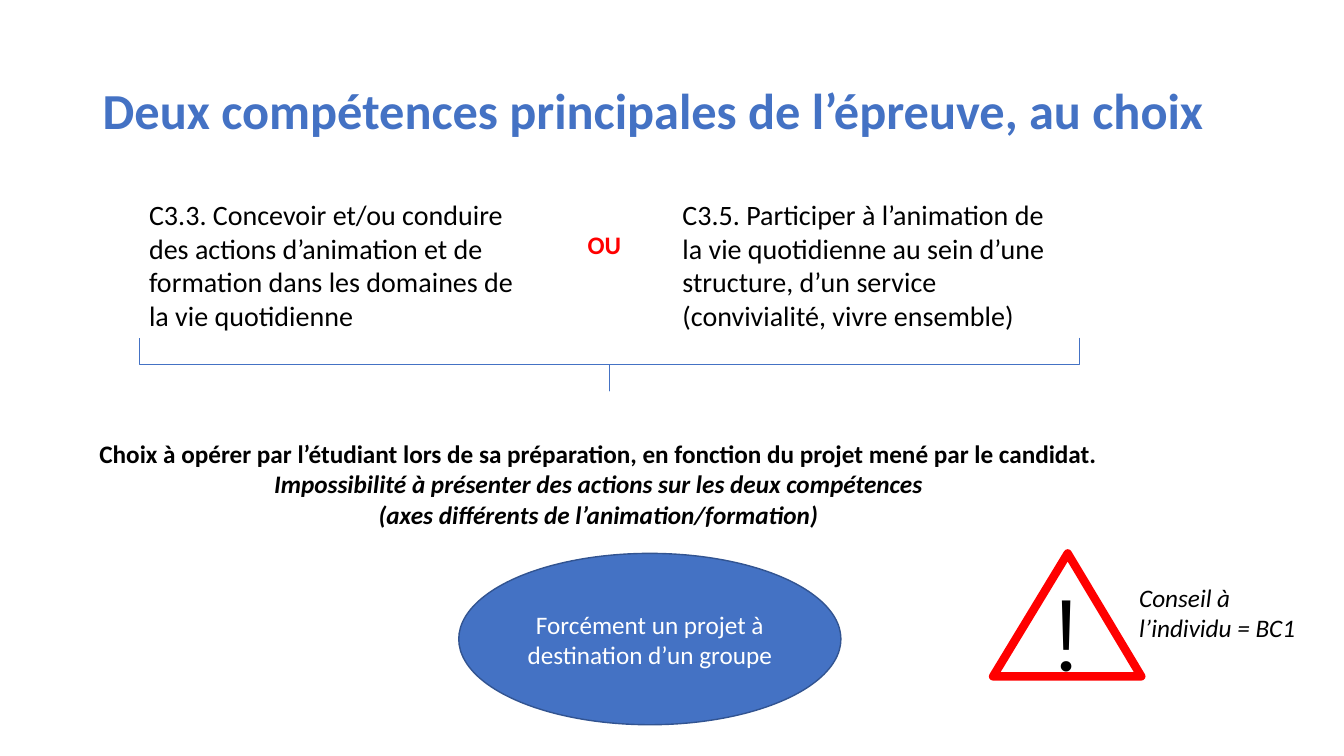
from lxml.etree import SubElement
from pptx import Presentation
from pptx.dml.color import RGBColor
from pptx.enum.shapes import MSO_SHAPE
from pptx.enum.text import MSO_ANCHOR, PP_ALIGN
from pptx.oxml.ns import qn
from pptx.util import Pt

PX = 9144  # one px is a hundredth of an inch
BLUE, RED, BLACK, WHITE = "4472C4", "FF0000", "000000", "FFFFFF"


def paint(color, code):
    color.rgb = RGBColor.from_string(code)


class Board:
    font = "Calibri"

    def __init__(self, wide, high):
        self.deck = Presentation()
        self.deck.slide_width = wide * PX
        self.deck.slide_height = high * PX
        self.slide = self.deck.slides.add_slide(self.deck.slide_layouts[6])

    def label(self, frame, lines, size, color, bold=False, italics=(),
              align=PP_ALIGN.LEFT, anchor=MSO_ANCHOR.TOP, font=None):
        frame.word_wrap = True
        frame.vertical_anchor = anchor
        for i, line in enumerate(lines):
            para = frame.paragraphs[0] if i == 0 else frame.add_paragraph()
            para.text = line
            para.alignment = align
            para.font.name = font or self.font
            para.font.size = Pt(size)
            para.font.bold = bold
            para.font.italic = i in italics
            paint(para.font.color, color)
        return frame

    def text(self, box, lines, size, color=BLACK, **style):
        shape = self.slide.shapes.add_textbox(*(n * PX for n in box))
        return self.label(shape.text_frame, lines, size, color, **style)

    def finish(self, shape, line, width, fill=None):
        shape.shadow.inherit = False
        if fill:
            shape.fill.solid()
            paint(shape.fill.fore_color, fill)
        else:
            shape.fill.background()
        paint(shape.line.color, line)
        shape.line.width = Pt(width)
        return shape

    def shape(self, kind, box, line, width, fill=None):
        shape = self.slide.shapes.add_shape(kind, *(n * PX for n in box))
        return self.finish(shape, line, width, fill)

    def outline(self, points, line, width):
        start, *rest = points
        pen = self.slide.shapes.build_freeform(*start, scale=PX)
        pen.add_line_segments(rest, close=True)
        shape = self.finish(pen.convert_to_shape(), line, width)
        SubElement(shape.element.spPr.find(qn("a:ln")), qn("a:round"))


def main():
    board = Board(1333, 750)

    # Title
    title = board.text((92, 40, 1150, 145),
                       ["Deux compétences principales de l’épreuve, au choix"],
                       36, BLUE, bold=True, anchor=MSO_ANCHOR.MIDDLE)
    title.paragraphs[0].line_spacing = 0.9

    # The two skills and the word between them
    skills = (
        (138, "C3.3. Concevoir et/ou conduire des actions d’animation et de "
              "formation dans les domaines de la vie quotidienne"),
        (667, "C3.5. Participer à l’animation de la vie quotidienne au sein "
              "d’une structure, d’un service (convivialité, vivre ensemble)"),
    )
    for left, skill in skills:
        board.text((left, 191, 391, 145), [skill], 20)
    board.text((573, 223, 71, 40), ["OU"], 18, RED, bold=True)

    # Brace pointing down to the choice
    brace = board.shape(MSO_SHAPE.RIGHT_BRACE, (578, -105, 53, 933), BLUE, 0.5)
    brace.adjustments[0] = 0
    brace.adjustments[1] = 0.5
    brace.rotation = 90
    board.text((64, 430, 1059, 101), [
        "Choix à opérer par l’étudiant lors de sa préparation, "
        "en fonction du projet mené par le candidat.",
        "Impossibilité à présenter des actions sur les deux compétences",
        "(axes différents de l’animation/formation)",
    ], 18, bold=True, italics=(1, 2), align=PP_ALIGN.CENTER)

    # Group project
    group = board.shape(MSO_SHAPE.OVAL, (455, 549, 379, 170),
                        "325491", 1, BLUE)
    board.label(group.text_frame,
                ["Forcément un projet à destination d’un groupe"], 18, WHITE,
                align=PP_ALIGN.CENTER, anchor=MSO_ANCHOR.MIDDLE)

    # Warning sign and its advice
    board.outline([(985, 671), (1059, 549), (1132, 671)], RED, 6)
    board.text((1120, 573, 188, 71), ["Conseil à l’individu = BC1"], 18,
               italics=(0,))
    mark = board.text((1045, 564, 51, 123), ["!"], 72, font="Montserrat")
    mark.margin_left = mark.margin_right = mark.margin_bottom = 0
    mark.margin_top = 2 * PX

    board.deck.save("out.pptx")


if __name__ == "__main__":
    main()
